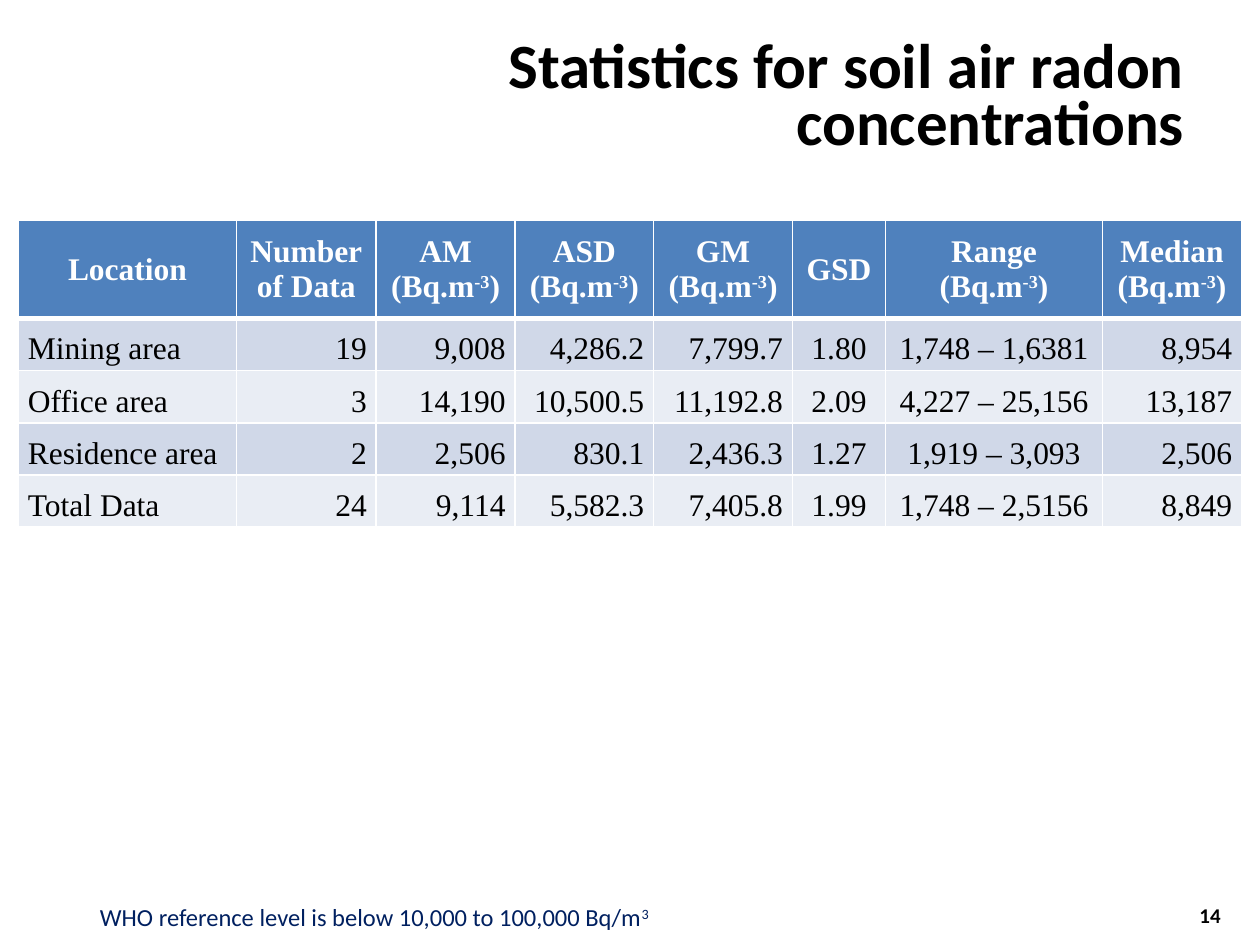
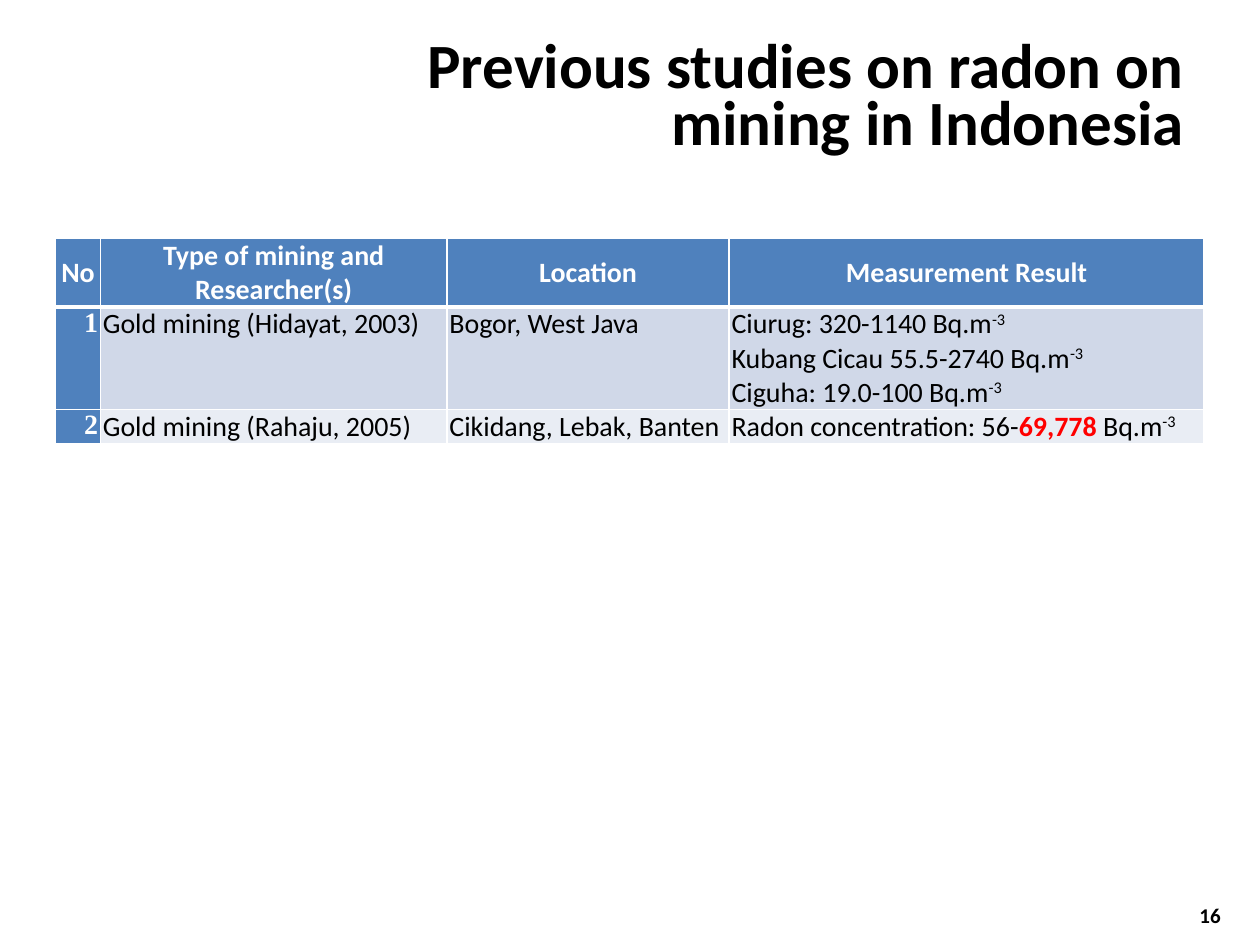
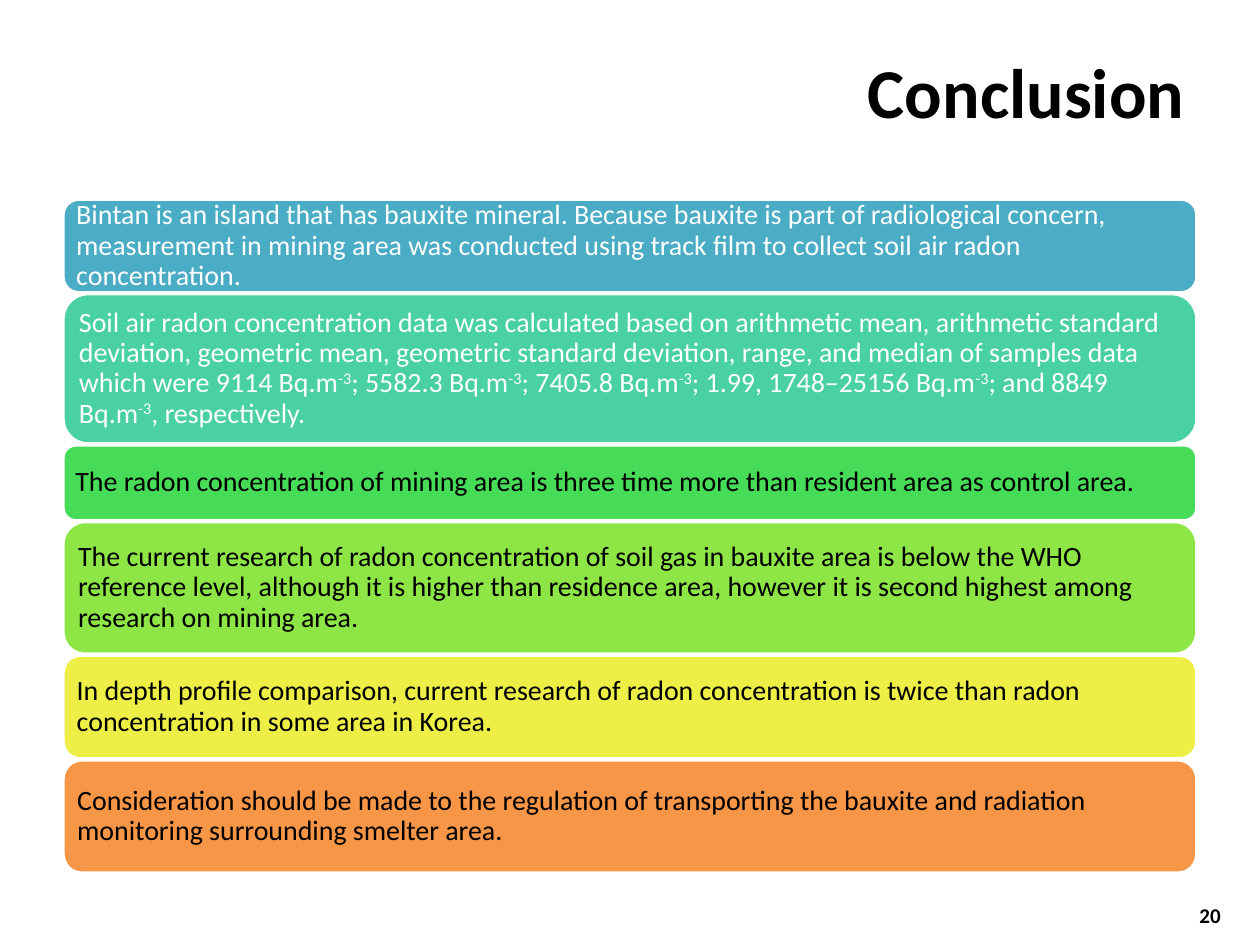
from lxml.etree import SubElement
from pptx import Presentation
from pptx.dml.color import RGBColor
from pptx.enum.shapes import MSO_SHAPE as Preset
from pptx.enum.text import MSO_ANCHOR as Anchor, PP_ALIGN as Align
from pptx.oxml.ns import qn
from pptx.util import Pt

BLACK, WHITE, RED, NAVY = "000000", "FFFFFF", "FF0000", "002060"
HEADER_FILL, BAND_FILLS = "4F81BD", ("D0D8E8", "E9EDF4")
SANS, SERIF = "Calibri", "Times New Roman"
LEFT, CENTER, RIGHT = Align.LEFT, Align.CENTER, Align.RIGHT
RAISED, ALERT = "^", "*"

TITLE_BOX = (138, 18, 546, 78)
NUMBER_BOX = (671.75, 508.5, 39.5, 28.5)
NOTE_BOX = (50, 507.5, 546, 32.5)
STATISTICS_BOX = (10.6, 126, 699, 174.8)
STUDIES_BOX = (31.7, 136, 656.5, 117.5)
CONCLUSION_BOX = (36, 113.8, 648, 385.2)

STATISTICS_WIDTHS = (124.5, 79.9, 79.3, 79.3, 79.3, 53.2, 124, 79.5)
STATISTICS_HEIGHTS = (56, 29.7, 29.7, 29.7, 29.7)
STATISTICS_ALIGNS = (LEFT, RIGHT, RIGHT, RIGHT, RIGHT, CENTER, CENTER, RIGHT)
UNIT = "(Bq.m|^-3|)"
STATISTICS = (
    ("Location", "Number\nof Data", f"AM\n{UNIT}", f"ASD\n{UNIT}", f"GM\n{UNIT}",
     "GSD", f"Range\n{UNIT}", f"Median\n{UNIT}"),
    ("Mining area", "19", "9,008", "4,286.2", "7,799.7", "1.80", "1,748 – 1,6381", "8,954"),
    ("Office area", "3", "14,190", "10,500.5", "11,192.8", "2.09", "4,227 – 25,156", "13,187"),
    ("Residence area", "2", "2,506", "830.1", "2,436.3", "1.27", "1,919 – 3,093", "2,506"),
    ("Total Data", "24", "9,114", "5,582.3", "7,405.8", "1.99", "1,748 – 2,5156", "8,849"),
)

STUDIES_WIDTHS = (25.75, 198, 161.25, 271.5)
STUDIES_HEIGHTS = (39.5, 58.5, 19.5)
STUDIES_ALIGNS = (RIGHT, LEFT, LEFT, LEFT)
STUDIES = (
    ("No", "Type of mining and Researcher(s)", "Location", "Measurement Result"),
    ("1", "Gold mining (Hidayat, 2003)", "Bogor, West Java",
     "Ciurug: 320-1140 Bq.m|^-3\nKubang Cicau 55.5-2740 Bq.m|^-3\nCiguha: 19.0-100 Bq.m|^-3"),
    ("2", "Gold mining (Rahaju, 2005)", "Cikidang, Lebak, Banten",
     "Radon concentration: 56-|*69,778| Bq.m|^-3"),
)

BAR_GAP = 0.5
CONCLUSIONS = (
    (53.5, "4BACC6", WHITE,
     "Bintan is an island that has bauxite mineral. Because bauxite is part of radiological "
     "concern, measurement in mining area was conducted using track film to collect soil air "
     "radon concentration."),
    (85.9, "49D1A3", WHITE,
     "Soil air radon concentration data was calculated based on arithmetic mean, arithmetic "
     "standard deviation, geometric mean, geometric standard deviation, range, and median of "
     "samples data which were 9114 Bq.m|^-3|; 5582.3 Bq.m|^-3|; 7405.8 Bq.m|^-3|; 1.99, "
     "1748–25156 Bq.m|^-3|; and 8849 Bq.m|^-3|, respectively."),
    (43.4, "47DC57", BLACK,
     "The radon concentration of mining area is three time more than resident area as control "
     "area."),
    (75.8, "8DE646", BLACK,
     "The current research of radon concentration of soil gas in bauxite area is below the WHO "
     "reference level, although it is higher than residence area, however it is second highest "
     "among research on mining area."),
    (59.3, "EEEF46", BLACK,
     "In depth profile comparison, current research of radon concentration is twice than radon "
     "concentration in some area in Korea."),
    (64.8, "F79646", BLACK,
     "Consideration should be made to the regulation of transporting the bauxite and radiation "
     "monitoring surrounding smelter area."),
)


def color(value):
    return RGBColor.from_string(value)


def points(box):
    return [Pt(length) for length in box]


def fill_solid(target, value):
    target.fill.solid()
    target.fill.fore_color.rgb = color(value)


def set_margins(target, horizontal, vertical):
    target.margin_left = target.margin_right = Pt(horizontal)
    target.margin_top = target.margin_bottom = Pt(vertical)


def write(frame, text, size, ink=BLACK, font=SANS, bold=False, align=LEFT, spacing=1.0):
    for index, line in enumerate(text.split("\n")):
        paragraph = frame.add_paragraph() if index else frame.paragraphs[0]
        paragraph.alignment = align
        paragraph.line_spacing = spacing
        paragraph.font.size = Pt(size)
        paragraph.font.name = font
        paragraph.font.bold = bold
        paragraph.font.color.rgb = color(ink)
        for part in line.split("|"):
            run = paragraph.add_run()
            run.text = part.lstrip(RAISED + ALERT)
            if part.startswith(RAISED):
                run._r.get_or_add_rPr().set("baseline", "30000")
            elif part.startswith(ALERT):
                run.font.bold = True
                run.font.color.rgb = color(RED)


def add_round_box(slide, box, fill):
    shape = slide.shapes.add_shape(Preset.ROUNDED_RECTANGLE, *points(box))
    shape.shadow.inherit = False
    fill_solid(shape, fill)
    shape.text_frame.word_wrap = True
    shape.text_frame.vertical_anchor = Anchor.MIDDLE
    return shape


def add_title(slide, box, text, size):
    shape = add_round_box(slide, box, WHITE)
    shape.adjustments[0] = 0.5
    shape.line.fill.background()
    solid = shape.fill._xPr.find(qn("a:solidFill"))
    SubElement(solid[0], qn("a:alpha"), val="75000")
    set_margins(shape.text_frame, -4.2, -7.8)
    write(shape.text_frame, text, size, bold=True, align=RIGHT, spacing=0.75)


def add_label(slide, box, text, size, margins=(7.2, 3.6), **style):
    frame = slide.shapes.add_textbox(*points(box)).text_frame
    frame.word_wrap = True
    frame.vertical_anchor = Anchor.MIDDLE
    set_margins(frame, *margins)
    write(frame, text, size, **style)


def set_borders(cell, bottom):
    properties = cell._tc.get_or_add_tcPr()
    for index, (side, width) in enumerate((("L", 1), ("R", 1), ("T", 1), ("B", bottom))):
        border = properties.makeelement(qn(f"a:ln{side}"), {"w": str(Pt(width))})
        SubElement(SubElement(border, qn("a:solidFill")), qn("a:srgbClr"), val=WHITE)
        properties.insert(index, border)


def add_data_table(slide, box, rows, widths, heights, aligns, size, margin,
                   font=SANS, spacing=1.0, numbered=False):
    table = slide.shapes.add_table(len(rows), len(widths), *points(box)).table
    table.first_row = table.horz_banding = False
    for column, width in zip(table.columns, widths):
        column.width = Pt(width)
    for row_index, values in enumerate(rows):
        table.rows[row_index].height = Pt(heights[row_index])
        is_header = row_index == 0
        for column_index, value in enumerate(values):
            cell = table.cell(row_index, column_index)
            is_number = numbered and column_index == 0 and not is_header
            is_strong = is_header or is_number
            set_margins(cell, margin, 0)
            cell.vertical_anchor = Anchor.MIDDLE if is_header else Anchor.TOP
            fill_solid(cell, HEADER_FILL if is_strong else BAND_FILLS[(row_index - 1) % 2])
            set_borders(cell, 3 if is_header else 1)
            write(cell.text_frame, value, size, WHITE if is_strong else BLACK,
                  SERIF if is_number else font, is_strong,
                  CENTER if is_header else aligns[column_index],
                  1.0 if is_header else spacing)


def add_conclusion_bars(slide, box, conclusions):
    left, top, width, _ = box
    for height, fill, ink, text in conclusions:
        bar = add_round_box(slide, (left, top, width, height), fill)
        bar.line.color.rgb = color(WHITE)
        bar.line.width = Pt(2)
        set_margins(bar.text_frame, 5, 5)
        write(bar.text_frame, text, 16, ink, spacing=0.9)
        top += height + BAR_GAP


def add_base_slide(presentation, title, number, title_size=36):
    slide = presentation.slides.add_slide(presentation.slide_layouts[6])
    add_title(slide, TITLE_BOX, title, title_size)
    add_label(slide, NUMBER_BOX, str(number), 12, bold=True, align=CENTER)
    return slide


def add_statistics_slide(presentation):
    slide = add_base_slide(presentation, "Statistics for soil air radon concentrations", 14)
    add_data_table(slide, STATISTICS_BOX, STATISTICS, STATISTICS_WIDTHS, STATISTICS_HEIGHTS,
                   STATISTICS_ALIGNS, 18, 5.4, font=SERIF, spacing=1.38)
    add_label(slide, NOTE_BOX, "WHO reference level is below 10,000 to 100,000 Bq/m|^3", 14,
              margins=(7.2, 7.2), ink=NAVY)


def add_studies_slide(presentation):
    slide = add_base_slide(presentation, "Previous studies on radon on mining in Indonesia", 16)
    add_data_table(slide, STUDIES_BOX, STUDIES, STUDIES_WIDTHS, STUDIES_HEIGHTS,
                   STUDIES_ALIGNS, 16, 1.4, numbered=True)


def add_conclusion_slide(presentation):
    slide = add_base_slide(presentation, "Conclusion", 20, title_size=40)
    add_conclusion_bars(slide, CONCLUSION_BOX, CONCLUSIONS)


def main():
    presentation = Presentation()
    presentation.slide_width, presentation.slide_height = Pt(720), Pt(540)
    add_statistics_slide(presentation)
    add_studies_slide(presentation)
    add_conclusion_slide(presentation)
    presentation.save("out.pptx")


if __name__ == "__main__":
    main()
